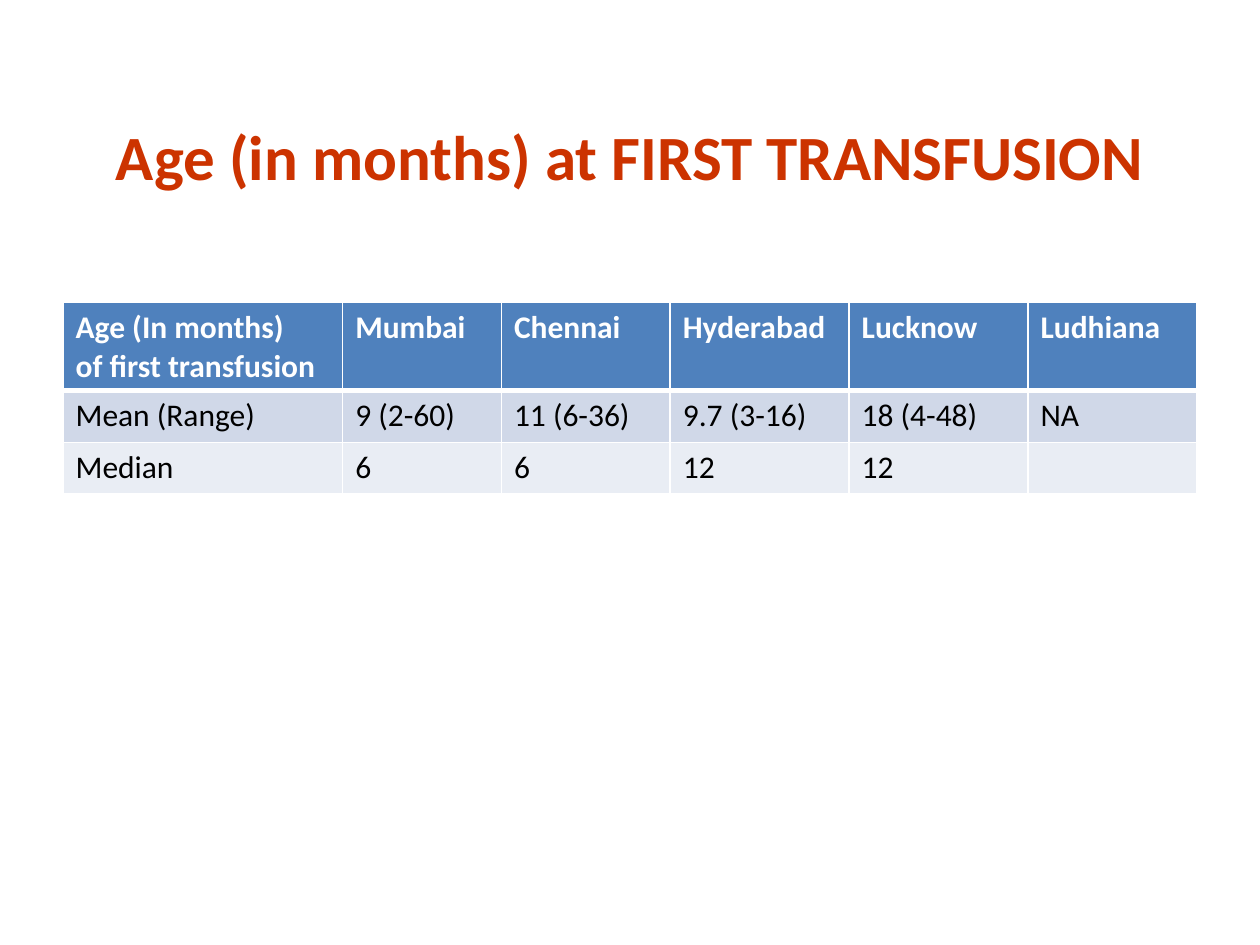
from dataclasses import dataclass

from lxml import etree
from pptx import Presentation
from pptx import util as u
from pptx.dml.color import RGBColor
from pptx.enum import text
from pptx.oxml.ns import qn


@dataclass(frozen=True)
class Theme:
    font: str = "Calibri"
    heading: str = "CC3300"
    header_fill: str = "4F81BD"
    header_text: str = "FFFFFF"
    body_text: str = "000000"
    bands: tuple = ("D0D8E8", "E9EDF4")
    rule: str = "FFFFFF"
    heading_size: int = 36
    table_size: int = 18
    thin: int = 1
    thick: int = 3


THEME = Theme()
WIDTH, HEIGHT = 10, 7.5
MARGIN = 0.05 * WIDTH

COLUMN_WIDTHS = [2.22, 1.26, 1.34, 1.42, 1.42, 1.34]
ROW_HEIGHTS = [0.69, 0.41, 0.41]
AGES = [
    ["Age (In months)\nof first transfusion", "Mumbai", "Chennai",
     "Hyderabad", "Lucknow", "Ludhiana"],
    ["Mean (Range)", "9 (2-60)", "11 (6-36)", "9.7 (3-16)", "18 (4-48)", "NA"],
    ["Median", "6", "6", "12", "12", ""],
]


def style_text(frame, size, color, bold):
    for paragraph in frame.paragraphs:
        for run in paragraph.runs:
            run.font.name = THEME.font
            run.font.size = u.Pt(size)
            run.font.bold = bold
            run.font.color.rgb = RGBColor.from_string(color)


def add_heading(slide, wording):
    box = slide.shapes.add_textbox(
        u.Inches(MARGIN), u.Inches(0.61),
        u.Inches(WIDTH - 2 * MARGIN), u.Inches(1.25))
    frame = box.text_frame
    frame.word_wrap = True
    frame.vertical_anchor = text.MSO_ANCHOR.MIDDLE
    frame.text = wording
    frame.paragraphs[0].alignment = text.PP_ALIGN.CENTER
    style_text(frame, THEME.heading_size, THEME.heading, True)


def set_borders(cell, top, bottom):
    """Rule all four sides of a cell; the side rules are always thin."""
    properties = cell._tc.get_or_add_tcPr()
    sides = {"L": THEME.thin, "R": THEME.thin, "T": top, "B": bottom}
    for side, points in sides.items():
        line = etree.SubElement(properties, qn(f"a:ln{side}"), w=str(u.Pt(points)))
        fill = etree.SubElement(line, qn("a:solidFill"))
        etree.SubElement(fill, qn("a:srgbClr"), val=THEME.rule)


def fill_cell(cell, wording, row):
    header = row == 0
    # A thick rule separates the header from the body
    set_borders(cell,
                top=THEME.thick if row == 1 else THEME.thin,
                bottom=THEME.thick if header else THEME.thin)
    band = THEME.header_fill if header else THEME.bands[(row - 1) % 2]
    cell.fill.solid()
    cell.fill.fore_color.rgb = RGBColor.from_string(band)
    cell.text_frame.text = wording
    color = THEME.header_text if header else THEME.body_text
    style_text(cell.text_frame, THEME.table_size, color, header)


def add_age_table(slide, rows):
    ages = slide.shapes.add_table(
        len(rows), len(COLUMN_WIDTHS), u.Inches(MARGIN), u.Inches(0.32 * HEIGHT),
        u.Inches(sum(COLUMN_WIDTHS)), u.Inches(sum(ROW_HEIGHTS))).table
    for column, width in zip(ages.columns, COLUMN_WIDTHS):
        column.width = u.Inches(width)
    for row, height in zip(ages.rows, ROW_HEIGHTS):
        row.height = u.Inches(height)
    for r, row in enumerate(rows):
        for c, wording in enumerate(row):
            fill_cell(ages.cell(r, c), wording, r)


def main():
    deck = Presentation()
    deck.slide_width, deck.slide_height = u.Inches(WIDTH), u.Inches(HEIGHT)
    slide = deck.slides.add_slide(deck.slide_layouts[6])

    # Heading
    add_heading(slide, "Age (in months) at FIRST TRANSFUSION")

    # Ages by city
    add_age_table(slide, AGES)

    deck.save("out.pptx")


if __name__ == "__main__":
    main()
